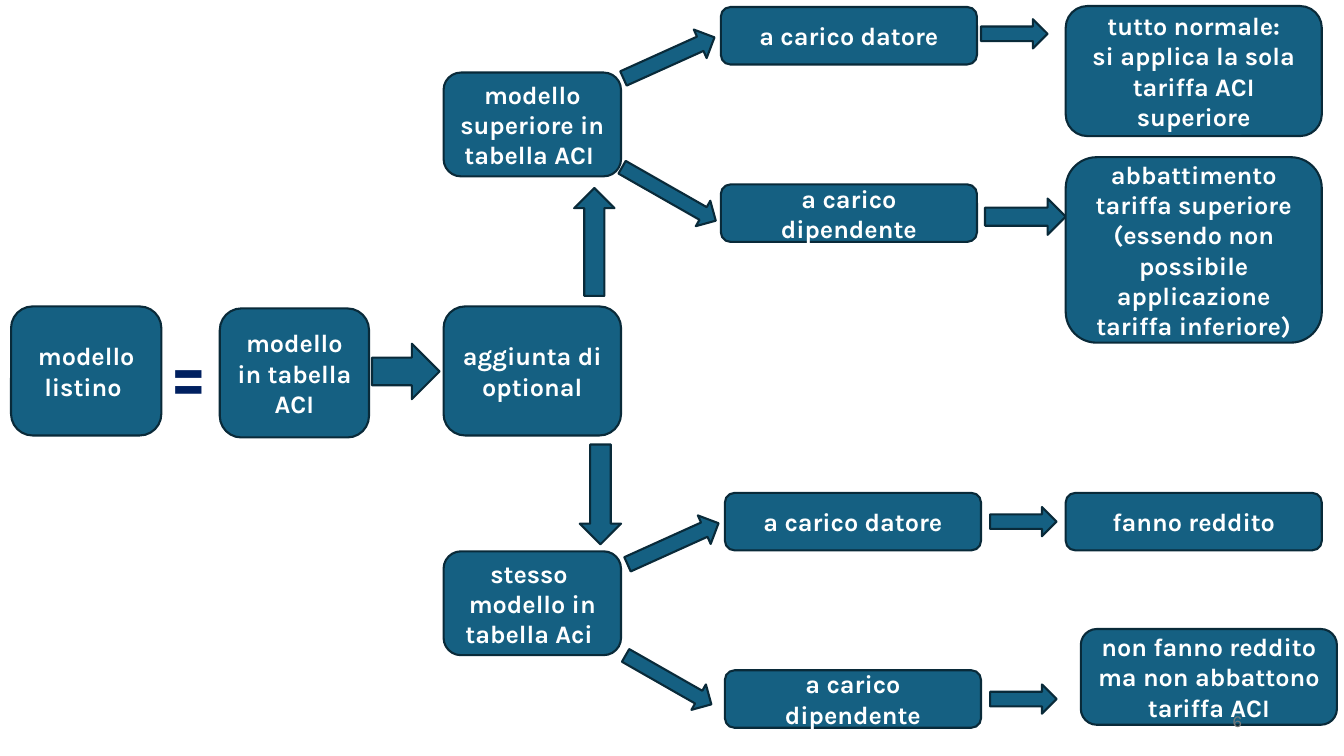
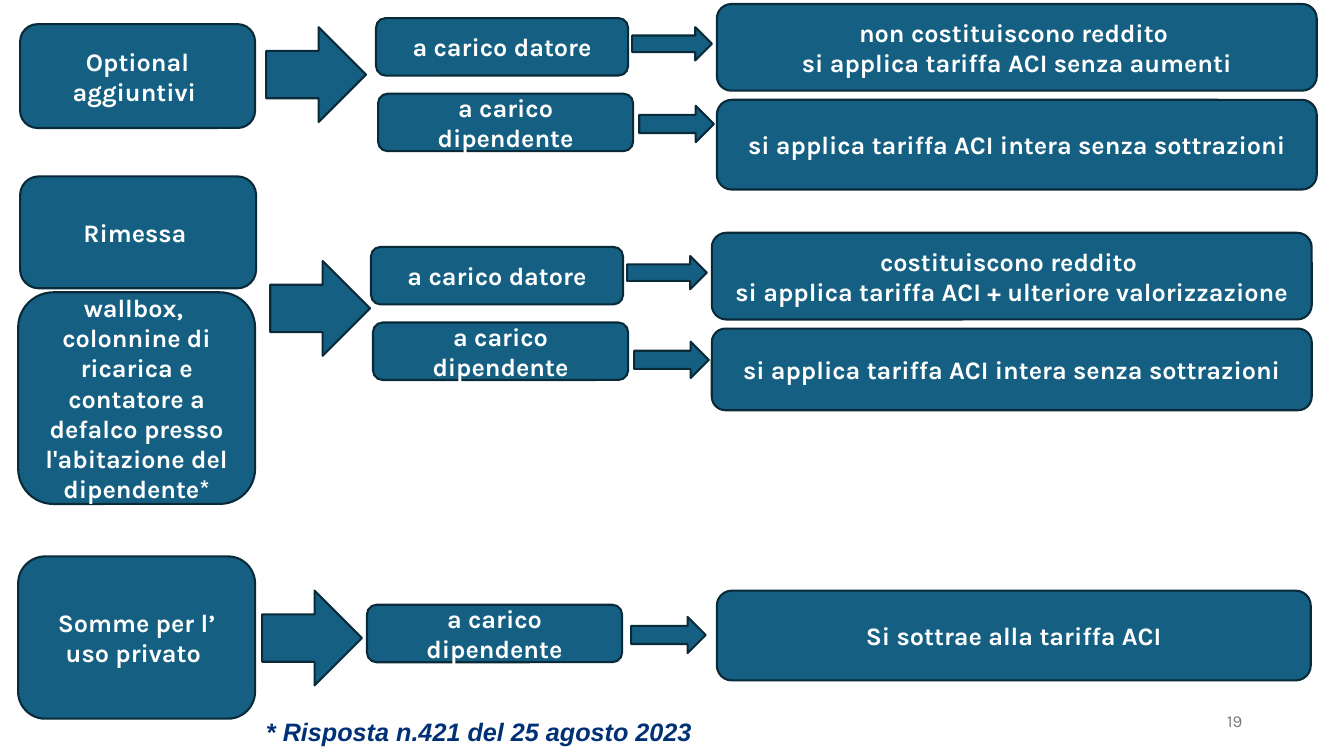
from pptx import Presentation
from pptx.dml.color import RGBColor
from pptx.enum import shapes, text
from pptx.util import Inches, Pt

BLUE, OUTLINE, WHITE = "156082", "092A39", "FFFFFF"
NAVY, NOTE_BLUE, GREY = "002060", "003076", "797979"
FONT = "Karla"
PAYER_HEIGHT = 0.57
EMPLOYER, EMPLOYEE = "a carico datore", "a carico dipendente"
FULL_RATE = "si applica tariffa ACI intera senza sottrazioni"
CENTER, RIGHT, LEFT = text.PP_ALIGN.CENTER, text.PP_ALIGN.RIGHT, text.PP_ALIGN.LEFT


def color(value):
    return RGBColor.from_string(value)


def write(frame, lines, size=18, ink=WHITE, font=FONT, bold=True, italic=False,
          align=CENTER, anchor=text.MSO_ANCHOR.MIDDLE):
    frame.word_wrap = True
    frame.vertical_anchor = anchor
    for index, line in enumerate(lines):
        paragraph = frame.add_paragraph() if index else frame.paragraphs[0]
        paragraph.alignment = align
        run = paragraph.add_run()
        run.text = line
        run.font.name = font
        run.font.size = Pt(size)
        run.font.bold = bold
        run.font.italic = italic
        run.font.color.rgb = color(ink)


def add_figure(slide, kind, at):
    shape = slide.shapes.add_shape(kind, *map(Inches, at))
    shape.shadow.inherit = False
    shape.fill.solid()
    shape.fill.fore_color.rgb = color(BLUE)
    shape.line.color.rgb = color(OUTLINE)
    shape.line.width = Pt(1.5)
    return shape


def add_box(slide, at, *lines):
    shape = add_figure(slide, shapes.MSO_SHAPE.ROUNDED_RECTANGLE, at)
    write(shape.text_frame, lines)


def add_arrow(slide, at, rotation=0):
    add_figure(slide, shapes.MSO_SHAPE.RIGHT_ARROW, at).rotation = rotation


def add_label(slide, at, line, **style):
    label = slide.shapes.add_textbox(*map(Inches, at))
    write(label.text_frame, [line], **style)


def add_page_number(slide, number):
    add_label(slide, (9.42, 6.95, 3, 0.4), number, size=12, ink=GREY,
              bold=False, align=RIGHT)


def shift(left, top, at):
    return left + at[0], top + at[1], at[2], at[3]


def add_payment(slide, left, top, width, payer, arrow, result, lines):
    add_box(slide, (left, top, width, PAYER_HEIGHT), payer)
    add_arrow(slide, shift(left, top, arrow))
    add_box(slide, shift(left, top, result), *lines)


def add_fork(slide, left, top, falling_length, outcomes):
    add_arrow(slide, shift(left, top, (-1.01, 0.35, 0.99, 0.31)), 335.7)
    add_arrow(slide, shift(left, top, (-1.05, 1.71, falling_length, 0.29)), 29.7)
    for index, (payer, outcome) in enumerate(zip((EMPLOYER, EMPLOYEE), outcomes)):
        add_payment(slide, left, top + index * 1.76, 2.54, payer, *outcome)


def add_cost(slide, left, top, arrow_offset, payments):
    add_arrow(slide, shift(left, top, (*arrow_offset, 0.99, 0.94)))
    for offset, width, payer, arrow, result, lines in payments:
        add_payment(slide, left + offset[0], top + offset[1], width, payer,
                    arrow, result, lines)


def add_two_payer_cost(slide, left, top, arrow_offset, employer_lines,
                       employee_arrow_top, employee_height):
    add_cost(slide, left, top, arrow_offset, [
        ((0, 0), 2.5, EMPLOYER, (2.54, 0.09, 0.79, 0.33),
         (3.38, -0.14, 5.95, 0.86), employer_lines),
        ((0.02, 0.75), 2.53, EMPLOYEE, (2.59, employee_arrow_top, 0.74, 0.36),
         (3.36, 0.06, 5.95, employee_height), [FULL_RATE]),
    ])


def build_model_slide(slide):
    add_box(slide, (0.11, 3.04, 1.49, 1.28), "modello listino ")
    add_label(slide, (1.41, 3.18, 0.92, 1.01), "=", size=54, ink=NAVY,
              anchor=text.MSO_ANCHOR.TOP)
    add_box(slide, (2.18, 3.06, 1.48, 1.28), "modello in tabella ACI")
    add_arrow(slide, (3.69, 3.41, 0.67, 0.55))
    add_box(slide, (4.4, 3.04, 1.76, 1.28), "aggiunta di optional")
    add_arrow(slide, (5.36, 2.2, 1.07, 0.4), 270)
    add_arrow(slide, (5.46, 4.7, 0.99, 0.41), 90)
    add_box(slide, (4.4, 0.72, 1.76, 1.03), "modello superiore in tabella ACI ")
    add_box(slide, (4.4, 5.47, 1.76, 1.03), "stesso ", "modello in tabella Aci ")
    add_fork(slide, 7.15, 0.07, 1.07, [
        ((2.58, 0.12, 0.66, 0.29), (3.42, -0.01, 2.54, 1.29),
         ["tutto normale:", "si applica la sola tariffa ACI superiore"]),
        ((2.62, 0.14, 0.8, 0.36), (3.42, -0.27, 2.54, 1.84),
         ["abbattimento tariffa superiore",
          "(essendo non possibile applicazione tariffa inferiore)"]),
    ])
    short_arrow = (2.63, 0.14, 0.66, 0.29)
    add_fork(slide, 7.19, 4.89, 0.98, [
        (short_arrow, (3.38, 0, 2.54, 0.57), ["fanno reddito"]),
        (short_arrow, (3.53, -0.41, 2.54, 0.95),
         ["non fanno reddito ma non abbattono tariffa ACI"]),
    ])
    add_page_number(slide, "6")


def build_cost_slide(slide):
    add_box(slide, (0.2, 0.24, 2.33, 1.03), "Optional", "aggiuntivi ")
    add_two_payer_cost(slide, 3.73, 0.18, (-1.09, 0.09),
                       ["non costituiscono reddito ",
                        "si applica tariffa ACI senza aumenti"], 0.12, 0.89)
    add_box(slide, (0.2, 1.75, 2.34, 1.11), "Rimessa ")
    add_box(slide, (0.18, 2.9, 2.35, 2.1), "wallbox, ",
            "colonnine di ricarica e contatore a defalco presso "
            "l'abitazione del dipendente*")
    add_two_payer_cost(slide, 3.68, 2.45, (-1, 0.14),
                       ["costituiscono reddito ",
                        "si applica tariffa ACI + ulteriore valorizzazione"],
                       0.19, 0.81)
    add_box(slide, (0.18, 5.52, 2.35, 1.61), "Somme per l’ uso privato ")
    add_cost(slide, 3.64, 6, (-1.04, -0.14), [
        ((0, 0), 2.53, EMPLOYEE, (2.62, 0.12, 0.74, 0.36),
         (3.47, -0.14, 5.89, 0.89), ["Si sottrae alla tariffa ACI"]),
    ])
    add_page_number(slide, "19")
    add_label(slide, (2.54, 7.06, 4.46, 0.4),
              "* Risposta n.421 del 25 agosto 2023", ink=NOTE_BLUE, font="Arial",
              italic=True, align=LEFT, anchor=text.MSO_ANCHOR.TOP)


def main():
    presentation = Presentation()
    presentation.slide_width = Inches(13.33)
    presentation.slide_height = Inches(7.5)
    blank = presentation.slide_layouts[6]
    for build in (build_model_slide, build_cost_slide):
        build(presentation.slides.add_slide(blank))
    presentation.save("out.pptx")


if __name__ == "__main__":
    main()
